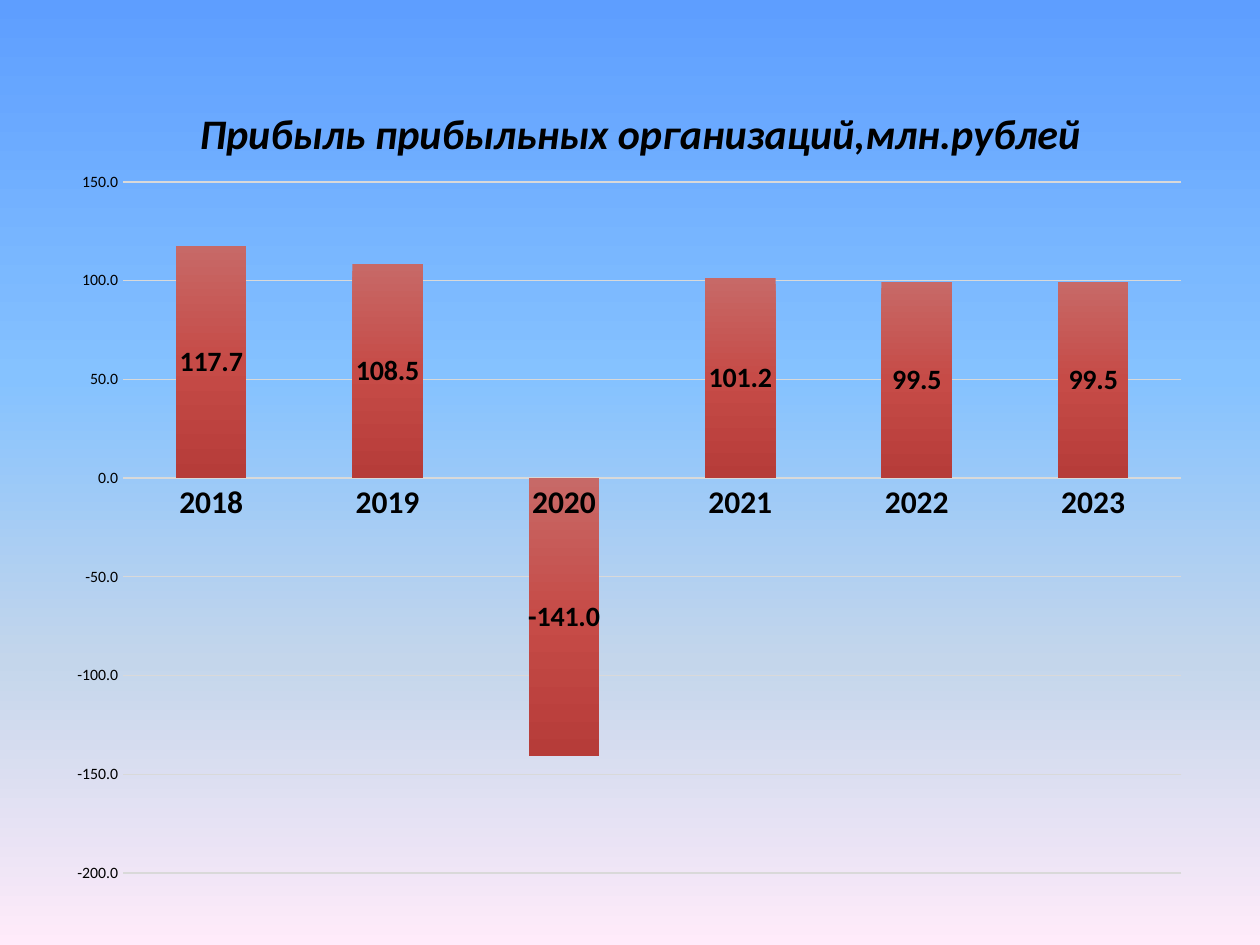
import pptx
import pptx.chart.data
import pptx.dml.color
import pptx.enum.chart
import pptx.oxml
import pptx.oxml.ns
import pptx.util
from pptx.util import Cm

# Content
TITLE = "Прибыль прибыльных организаций,млн.рублей"
PROFIT = {"2018": 117.7, "2019": 108.5, "2020": -141, "2021": 101.2, "2022": 99.5, "2023": 99.5}

THEME = {
    "font": "Calibri",
    "text": "000000",
    "grid": "D9D9D9",
    "sky": [(0, "5E9EFF"), (40, "85C2FF"), (70, "C4D6EB"), (100, "FFEBFA")],
    "bars": [(0, "C76967"), (50, "C64B47"), (100, "B63C39")],
    "title": 24, "years": 18, "values": 16, "base": 10, "scale": 9,
}

# Places inside the chart, as shares of its width and height
TITLE_PLACE = {"x": 0.12, "y": 0.05}
PLOT_PLACE = {"x": 0.06, "y": 0.15, "w": 0.92, "h": 0.82}


def color(value):
    return pptx.dml.color.RGBColor.from_string(value)


def style_font(font, size, bold=False, italic=False):
    font.name = THEME["font"]
    font.size = pptx.util.Pt(THEME[size])
    font.bold = bold
    font.italic = italic
    font.color.rgb = color(THEME["text"])


def paint_gradient(fill, owner, stops):
    """Fill from top to bottom; owner is the element that holds the fill."""
    fill.gradient()
    fill.gradient_angle = 270
    stop_list = owner.find(".//" + pptx.oxml.ns.qn("a:gsLst"))
    stop_list.clear()
    for percent, value in stops:
        stop_list.append(pptx.oxml.parse_xml(
            f'<a:gs {pptx.oxml.ns.nsdecls("a")} pos="{percent * 1000}">'
            f'<a:srgbClr val="{value}"/></a:gs>'))


def place_part(part, after, place, inner=False):
    """Give a chart part a fixed place, following its child named after."""
    modes = "".join(f'<c:{key}Mode val="edge"/>' for key in "xy")
    sizes = "".join(f'<c:{key} val="{share}"/>' for key, share in place.items())
    target = '<c:layoutTarget val="inner"/>' if inner else ""
    for old in part.findall(pptx.oxml.ns.qn("c:layout")):
        part.remove(old)
    layout = pptx.oxml.parse_xml(
        f'<c:layout {pptx.oxml.ns.nsdecls("c")}><c:manualLayout>'
        f'{target}{modes}{sizes}</c:manualLayout></c:layout>')
    position = part.index(part.find(pptx.oxml.ns.qn(after))) + 1 if after else 0
    part.insert(position, layout)


# Slide and background
deck = pptx.Presentation()
deck.slide_width, deck.slide_height = Cm(25.4), Cm(19.05)
page = deck.slides.add_slide(deck.slide_layouts[6])
paint_gradient(page.background.fill, page.element, THEME["sky"])

# Chart
data = pptx.chart.data.CategoryChartData(number_format="0.0")
data.categories = list(PROFIT)
data.add_series(TITLE, list(PROFIT.values()))
chart = page.shapes.add_chart(
    pptx.enum.chart.XL_CHART_TYPE.COLUMN_STACKED,
    Cm(1.09), Cm(1.12), Cm(23.19), Cm(16.99), data).chart
style_font(chart.font, "base")
chart.has_legend = False

# Chart title
chart.has_title = True
chart.chart_title.include_in_layout = False
para = chart.chart_title.text_frame.paragraphs[0]
para.text = TITLE
style_font(para.font, "title", bold=True, italic=True)
place_part(chart.element.find(".//" + pptx.oxml.ns.qn("c:title")), "c:tx", TITLE_PLACE)
place_part(chart.element.find(".//" + pptx.oxml.ns.qn("c:plotArea")), None, PLOT_PLACE, inner=True)

# Axes
for axis, size, bold in ((chart.category_axis, "years", True), (chart.value_axis, "scale", False)):
    axis.major_tick_mark = axis.minor_tick_mark = pptx.enum.chart.XL_TICK_MARK.NONE
    axis.format.line.fill.background()
    style_font(axis.tick_labels.font, size, bold)
scale = chart.value_axis
scale.minimum_scale, scale.maximum_scale, scale.major_unit = -200, 150, 50
scale.tick_labels.number_format = "0.0"
scale.tick_labels.number_format_is_linked = False
scale.has_major_gridlines = True
scale.major_gridlines.format.line.color.rgb = color(THEME["grid"])
scale.major_gridlines.format.line.width = pptx.util.Pt(0.75)

# Columns and their values
plot = chart.plots[0]
plot.gap_width, plot.overlap = 150, 100
plot.vary_by_categories = False
columns = plot.series[0]
columns.invert_if_negative = False
paint_gradient(columns.format.fill, chart.element.find(".//" + pptx.oxml.ns.qn("c:ser")), THEME["bars"])
labels = columns.data_labels
labels.show_value = True
labels.number_format = "0.0"
labels.number_format_is_linked = False
labels.position = pptx.enum.chart.XL_LABEL_POSITION.CENTER
style_font(labels.font, "values", bold=True)

deck.save("out.pptx")
